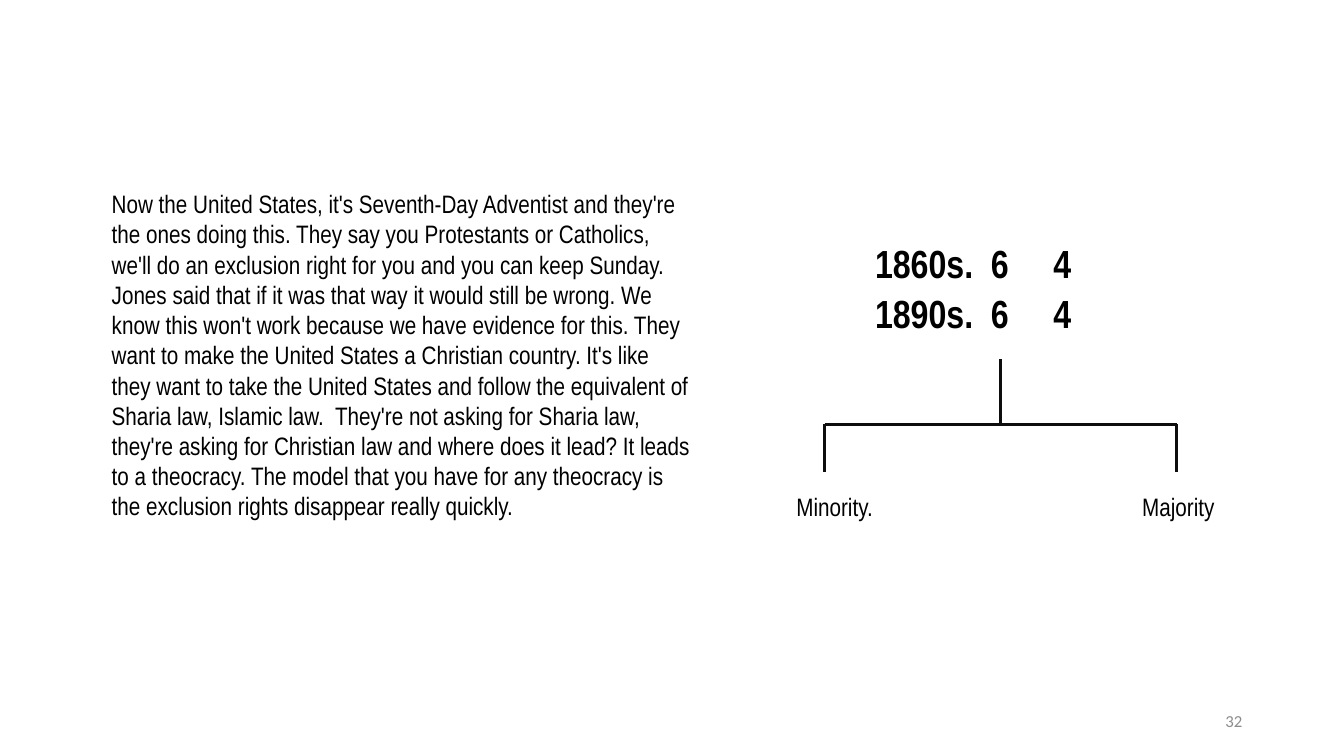
"""Build a slide on exclusion rights with a minority and majority bracket."""
import dataclasses

import lxml.etree
import pptx
import pptx.dml.color
import pptx.enum.shapes
import pptx.enum.text
import pptx.oxml.ns
import pptx.util

Inches = pptx.util.Inches
Align = pptx.enum.text.PP_ALIGN
Anchor = pptx.enum.text.MSO_ANCHOR


@dataclasses.dataclass(frozen=True)
class Theme:
    """Hold the fonts, colours and sizes of the slide."""
    text_font: str = "Arial Narrow"
    number_font: str = "Calibri"
    text_color: str = "000000"
    number_color: str = "8C8C8C"
    line_color: str = "0D0D0D"
    decade_size: int = 28
    text_size: int = 18
    number_size: int = 12
    line_width: float = 2.25
    diagram_spacing: float = 1.07


class SlideBuilder:
    """Draw styled elements on one slide."""

    def __init__(self, slide, theme):
        """Keep the slide and its theme."""
        self.slide = slide
        self.theme = theme

    def add_text(self, position, lines, size, font=None, color=None, bold=False,
                 align=Align.LEFT, anchor=Anchor.TOP, spacing=None, tabs=()):
        """Add a text box with one paragraph per line and optional tab stops."""
        shape = self.slide.shapes.add_textbox(*map(Inches, position))
        frame = shape.text_frame
        frame.word_wrap = True
        frame.vertical_anchor = anchor
        frame.text = "\n".join(lines)
        for paragraph in frame.paragraphs:
            paragraph.alignment = align
            paragraph.line_spacing = spacing
            if tabs:
                self.set_tabs(paragraph, tabs)
            for run in paragraph.runs:
                run.font.name = font or self.theme.text_font
                run.font.size = pptx.util.Pt(size)
                run.font.bold = bold
                run.font.color.rgb = pptx.dml.color.RGBColor.from_string(
                    color or self.theme.text_color)

    def set_tabs(self, paragraph, tabs):
        """Set left tab stops, in inches from the text edge."""
        qualified = pptx.oxml.ns.qn
        properties = paragraph._p.get_or_add_pPr()
        tab_list = lxml.etree.SubElement(properties, qualified("a:tabLst"))
        for tab in tabs:
            lxml.etree.SubElement(tab_list, qualified("a:tab"),
                                  pos=str(Inches(tab)), algn="l")

    def add_line(self, start, end):
        """Add a straight line without a shadow."""
        line = self.slide.shapes.add_connector(
            pptx.enum.shapes.MSO_CONNECTOR.STRAIGHT, *map(Inches, start + end))
        line.line.width = pptx.util.Pt(self.theme.line_width)
        line.line.color.rgb = pptx.dml.color.RGBColor.from_string(self.theme.line_color)
        lxml.etree.SubElement(line._element.spPr, pptx.oxml.ns.qn("a:effectLst"))

    def add_bracket(self, left, middle, right, top, bar, bottom):
        """Add a stem that splits into two branches."""
        self.add_line((middle, top), (middle, bar))
        self.add_line((left, bar), (right, bar))
        for branch in (left, right):
            self.add_line((branch, bar), (branch, bottom))


BODY = (
    "Now the United States, it's Seventh-Day Adventist and they're the ones doing this. "
    "They say you Protestants or Catholics, we'll do an exclusion right for you and you can "
    "keep Sunday. Jones said that if it was that way it would still be wrong. We know this "
    "won't work because we have evidence for this. They want to make the United States a "
    "Christian country. It's like they want to take the United States and follow the "
    "equivalent of Sharia law, Islamic law.  They're not asking for Sharia law, they're "
    "asking for Christian law and where does it lead? It leads to a theocracy. The model "
    "that you have for any theocracy is the exclusion rights disappear really quickly."
)


def main():
    """Build and save the presentation."""
    presentation = pptx.Presentation()
    presentation.slide_width = Inches(13.33)
    presentation.slide_height = Inches(7.5)
    theme = Theme()
    slide = presentation.slides.add_slide(presentation.slide_layouts[6])
    builder = SlideBuilder(slide, theme)

    builder.add_text((9.42, 6.95, 3, 0.4), ["32"], theme.number_size,
                     font=theme.number_font, color=theme.number_color,
                     align=Align.RIGHT, anchor=Anchor.MIDDLE)
    decades = [f"{decade}.\t6\t4" for decade in ("1860s", "1890s")]
    builder.add_text((8.58, 2.29, 2.68, 1.08), decades, theme.decade_size, bold=True,
                     spacing=theme.diagram_spacing, tabs=(1.15, 1.77))
    builder.add_text((7.8, 4.8, 4.41, 0.41), ["Minority.\tMajority"], theme.text_size,
                     spacing=theme.diagram_spacing, tabs=(3.43,))
    builder.add_bracket(left=8.18, middle=9.92, right=11.67, top=3.56, bar=4.21, bottom=4.68)
    builder.add_text((1.01, 1.82, 5.97, 4.04), [BODY], theme.text_size)
    presentation.save("out.pptx")


if __name__ == "__main__":
    main()
